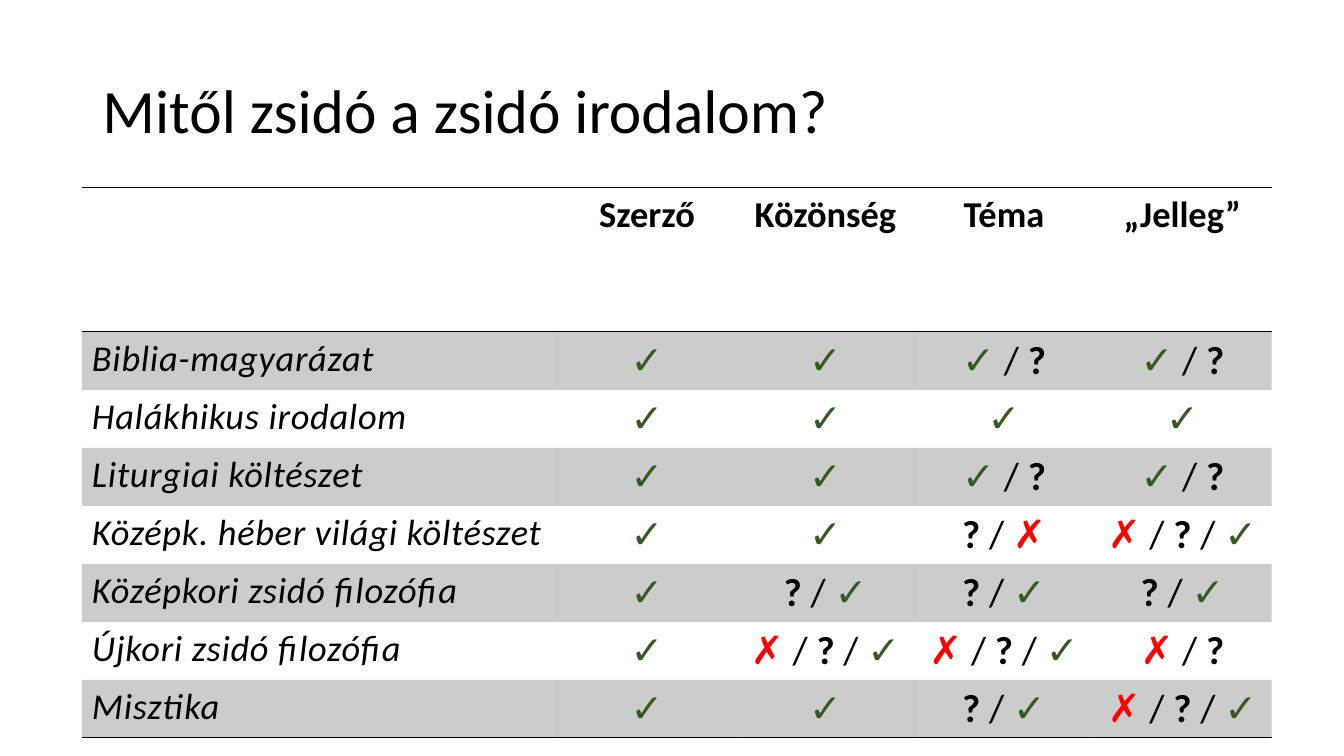
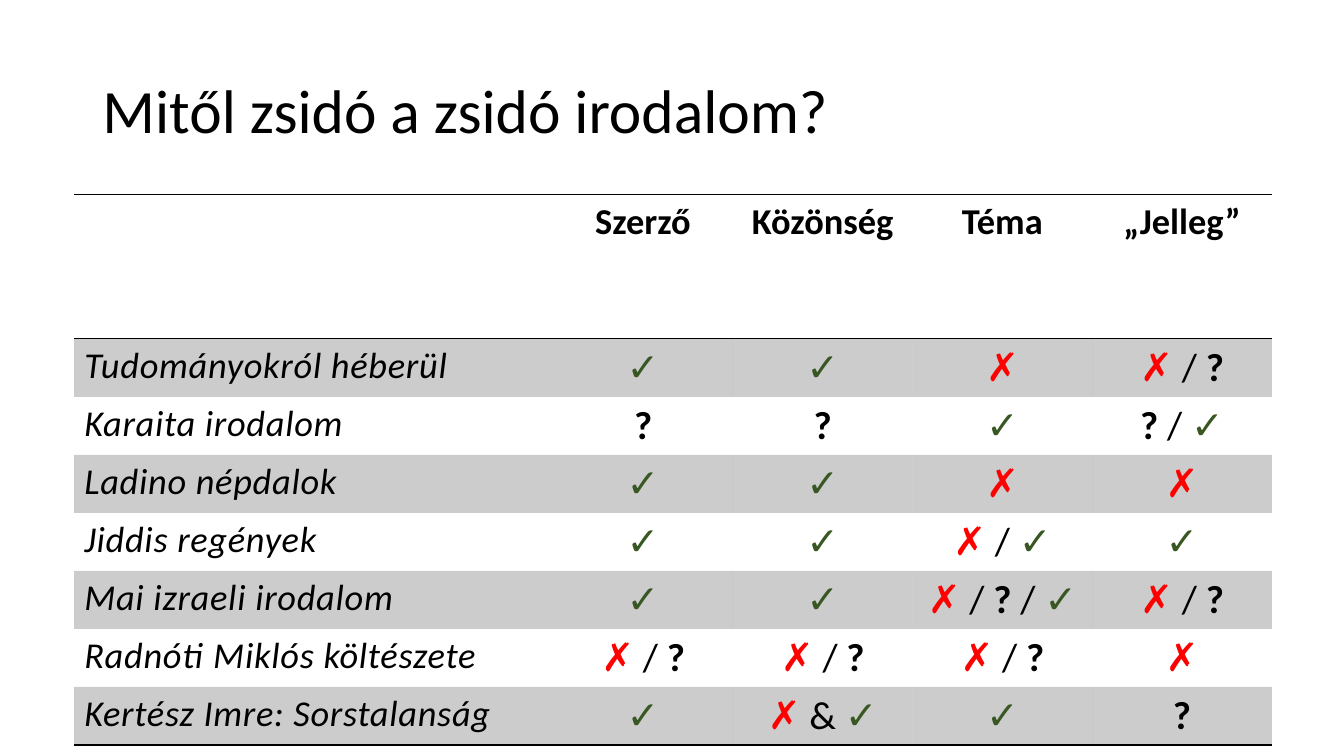
from pptx import Presentation
from pptx.dml.color import RGBColor
from pptx.enum.text import MSO_ANCHOR, PP_ALIGN
from pptx.oxml import parse_xml
from pptx.oxml.ns import nsdecls, qn
from pptx.util import Pt

LEFT, CENTER = PP_ALIGN.LEFT, PP_ALIGN.CENTER
MIDDLE = MSO_ANCHOR.MIDDLE
TITLE_ONLY = 5
PLAIN_TABLE_STYLE = "{2D5ABB26-0587-4C30-8999-92F81FD0307C}"

BLACK, GREEN, RED = "000000", "385723", "FF0000"
MARK_COLORS = {"✓": GREEN, "✗": RED, "?": BLACK}

TITLE = "Mitől zsidó a zsidó irodalom?"
CRITERIA = ["Szerző", "Közönség", "Téma", "„Jelleg”"]
GENRES = [
    ("Biblia-magyarázat", "✓", "✓", "✓ / ?", "✓ / ?"),
    ("Halákhikus irodalom", "✓", "✓", "✓", "✓"),
    ("Liturgiai költészet", "✓", "✓", "✓ / ?", "✓ / ?"),
    ("Középk. héber világi költészet", "✓", "✓", "? / ✗", "✗ / ? / ✓"),
    ("Középkori zsidó filozófia", "✓", "? / ✓", "? / ✓", "? / ✓"),
    ("Újkori zsidó filozófia", "✓", "✗ / ? / ✓", "✗ / ? / ✓", "✗ / ?"),
    ("Misztika", "✓", "✓", "? / ✓", "✗ / ? / ✓"),
]
BORDER_CASES = [
    ("Tudományokról héberül", "✓", "✓", "✗", "✗ / ?"),
    ("Karaita irodalom", "?", "?", "✓", "? / ✓"),
    ("Ladino népdalok", "✓", "✓", "✗", "✗"),
    ("Jiddis regények", "✓", "✓", "✗ / ✓", "✓"),
    ("Mai izraeli irodalom", "✓", "✓", "✗ / ? / ✓", "✗ / ?"),
    ("Radnóti Miklós költészete", "✗ / ?", "✗ / ?", "✗ / ?", "✗"),
    ("Kertész Imre: Sorstalanság", "✓", "✗ & ✓", "✓", "?"),
]


def color(code):
    return RGBColor.from_string(code)


class Slides:
    """Holds the shared style and the page being filled."""

    font = "Calibri"
    title_size, text_size, mark_size = 44, 26, 28
    header_height, row_height = 103, 41.4
    right_edge = 908.5
    label_share = 0.4  # part of the table width taken by the first column

    def __init__(self):
        self.deck = Presentation()
        self.deck.slide_width, self.deck.slide_height = Pt(960), Pt(540)
        self.page = None

    def add_page(self, title):
        self.page = self.deck.slides.add_slide(self.deck.slide_layouts[TITLE_ONLY])
        box = self.page.shapes.title
        box.left, box.top, box.width, box.height = Pt(66), Pt(28.8), Pt(828), Pt(104.4)
        box.text_frame.vertical_anchor = MIDDLE
        para = box.text_frame.paragraphs[0]
        para.alignment, para.line_spacing = LEFT, 0.9
        self.add_span(para, title, self.title_size)

    def add_span(self, para, text, size, code=BLACK, bold=False, italic=False):
        span = para.add_run()
        span.text = text
        span.font.name, span.font.size = self.font, Pt(size)
        span.font.bold, span.font.italic = bold, italic
        span.font.color.rgb = color(code)
        return span

    def add_label(self, para, text):
        span = self.add_span(para, text, self.text_size, italic=True)
        span.font._element.set("spc", "50")

    def add_marks(self, para, marks):
        """Write bold coloured marks joined by plain separators."""
        tokens = marks.split()
        for place, token in enumerate(tokens, 1):
            gap = " " if place < len(tokens) else ""
            self.add_span(para, token + gap, self.mark_size,
                          MARK_COLORS.get(token, BLACK), bold=token in MARK_COLORS)

    def style_cell(self, cell, sides, shaded):
        """Draw border lines on the sides (T, B) and a 20% black band."""
        properties = cell._tc.get_or_add_tcPr()
        for side in sides:
            properties.append(parse_xml(
                f'<a:ln{side} {nsdecls("a")} w="12700"><a:solidFill>'
                f'<a:srgbClr val="{BLACK}"/></a:solidFill></a:ln{side}>'))
        if not shaded:
            cell.fill.background()
            return
        cell.fill.solid()
        cell.fill.fore_color.rgb = color(BLACK)
        properties.find(qn("a:solidFill"))[0].append(
            parse_xml(f'<a:alpha {nsdecls("a")} val="20000"/>'))

    def add_criteria_table(self, left, top, rows):
        width = self.right_edge - left
        height = self.header_height + self.row_height * len(rows)
        columns = len(CRITERIA) + 1
        table = self.page.shapes.add_table(
            len(rows) + 1, columns, Pt(left), Pt(top), Pt(width), Pt(height)).table
        table._tbl.tblPr.find(qn("a:tableStyleId")).text = PLAIN_TABLE_STYLE
        table.horz_banding = False

        mark_width = width * (1 - self.label_share) / len(CRITERIA)
        for number, column in enumerate(table.columns):
            column.width = Pt(mark_width if number else width * self.label_share)
        for number, row in enumerate(table.rows):
            row.height = Pt(self.row_height if number else self.header_height)
            sides = "TB" if number == 0 else "B" if number == len(rows) else ""
            for cell in row.cells:
                self.style_cell(cell, sides, shaded=number % 2 == 1)

        for number, heading in enumerate(CRITERIA, 1):
            para = table.cell(0, number).text_frame.paragraphs[0]
            para.alignment = CENTER
            self.add_span(para, heading, self.text_size, bold=True)
        for number, (label, *verdicts) in enumerate(rows, 1):
            self.add_label(table.cell(number, 0).text_frame.paragraphs[0], label)
            for column, marks in enumerate(verdicts, 1):
                para = table.cell(number, column).text_frame.paragraphs[0]
                para.alignment = CENTER
                self.add_marks(para, marks)


def main():
    slides = Slides()
    for left, top, rows in [(58.5, 134, GENRES), (53, 139, BORDER_CASES)]:
        slides.add_page(TITLE)
        slides.add_criteria_table(left, top, rows)
    slides.deck.save("out.pptx")


if __name__ == "__main__":
    main()
